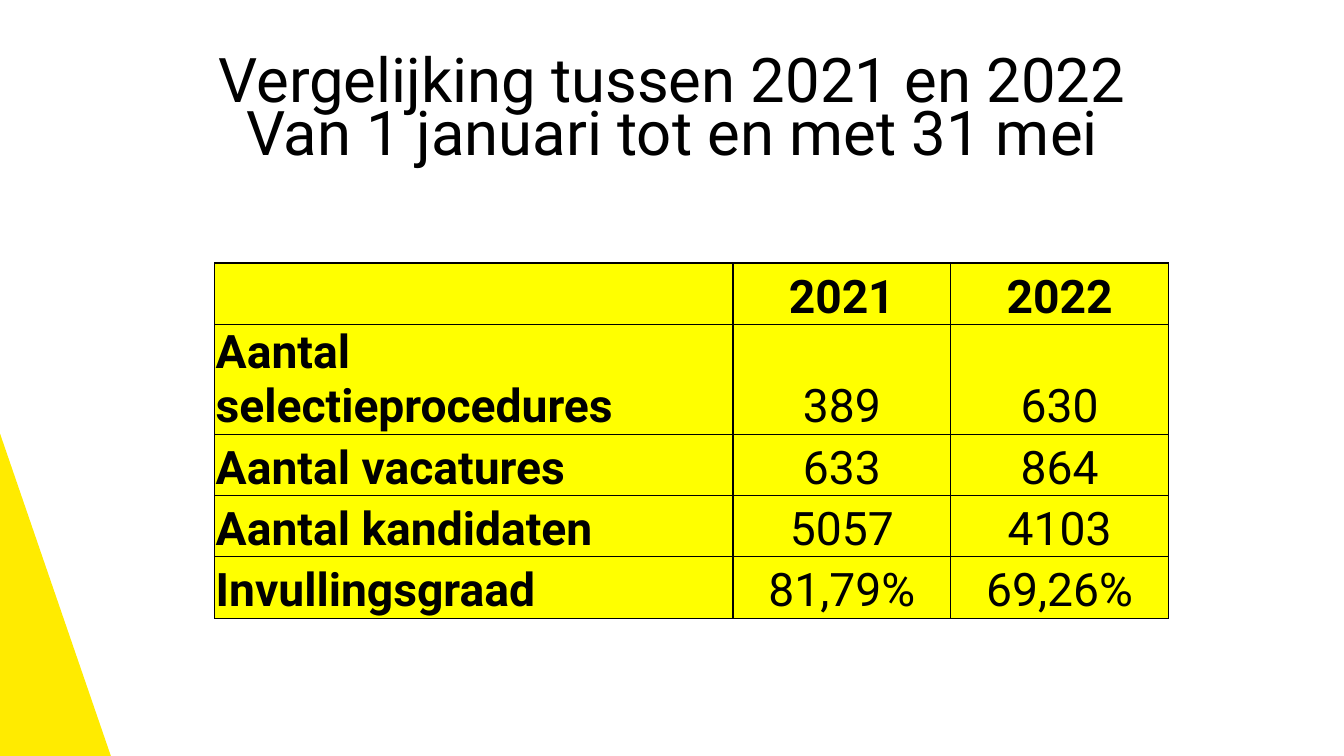
from pptx import Presentation
from pptx.dml.color import RGBColor
from pptx.enum.text import MSO_ANCHOR as Anchor, MSO_AUTO_SIZE as AutoSize, PP_ALIGN as Align
from pptx.oxml import parse_xml
from pptx.oxml.ns import nsdecls
from pptx.util import Inches, Pt

TITLE = "Vergelijking tussen 2021 en 2022\vVan 1 januari tot en met 31 mei"
ROWS = [
    ("", "2021", "2022"),
    ("Aantal selectieprocedures", "389", "630"),
    ("Aantal vacatures", "633", "864"),
    ("Aantal kandidaten", "5057", "4103"),
    ("Invullingsgraad", "81,79%", "69,26%"),
]
COLUMN_WIDTHS = (5.14, 2.16, 2.16)
ROW_HEIGHTS = (0.61, 1.08, 0.61, 0.61, 0.61)

FONT = "Roboto"
BLACK = RGBColor(0x00, 0x00, 0x00)
CELL_YELLOW = RGBColor(0xFF, 0xFF, 0x00)
WEDGE_YELLOW = RGBColor(0xFF, 0xEB, 0x00)


def write(text_frame, text, size, bold=False, align=Align.LEFT, line_spacing=None):
    paragraph = text_frame.paragraphs[0]
    paragraph.text = text
    paragraph.alignment = align
    paragraph.line_spacing = line_spacing
    for run in paragraph.runs:
        run.font.name = FONT
        run.font.size = Pt(size)
        run.font.bold = bold
        run.font.color.rgb = BLACK


def set_borders(cell, **widths):
    properties = cell._tc.get_or_add_tcPr()
    for position, (side, width) in enumerate(widths.items()):
        properties.insert(position, parse_xml(
            f'<a:ln{side} {nsdecls("a")} w="{Pt(width)}"><a:solidFill>'
            f'<a:srgbClr val="{BLACK}"/></a:solidFill></a:ln{side}>'))


def add_wedge(slide):
    builder = slide.shapes.build_freeform(0, Inches(7.5))
    builder.add_line_segments([(0, Inches(4.3)), (Inches(1.1), Inches(7.5))])
    wedge = builder.convert_to_shape()
    wedge.shadow.inherit = False
    wedge.fill.solid()
    wedge.fill.fore_color.rgb = WEDGE_YELLOW
    wedge.line.fill.background()


def add_title(slide):
    title = slide.shapes.title
    title.left, title.top = Inches(0.41), Inches(0.47)
    title.width, title.height = Inches(12.52), Inches(1.33)
    frame = title.text_frame
    frame.margin_left = frame.margin_right = frame.margin_top = frame.margin_bottom = 0
    frame.vertical_anchor = Anchor.MIDDLE
    frame.auto_size = AutoSize.NONE
    frame.word_wrap = True
    write(frame, TITLE, 44, align=Align.CENTER, line_spacing=Pt(38))


def add_comparison(slide):
    table = slide.shapes.add_table(
        len(ROWS), len(COLUMN_WIDTHS), Inches(2.13), Inches(2.61),
        Inches(sum(COLUMN_WIDTHS)), Inches(sum(ROW_HEIGHTS))).table
    table.first_row = table.horz_banding = False
    for column, width in zip(table.columns, COLUMN_WIDTHS):
        column.width = Inches(width)
    last = len(ROWS) - 1
    for i, values in enumerate(ROWS):
        table.rows[i].height = Inches(ROW_HEIGHTS[i])
        for j, value in enumerate(values):
            cell = table.cell(i, j)
            cell.margin_left = cell.margin_right = cell.margin_top = Inches(0.01)
            cell.margin_bottom = 0
            cell.vertical_anchor = Anchor.BOTTOM
            cell.fill.solid()
            cell.fill.fore_color.rgb = CELL_YELLOW
            set_borders(cell, L=1, R=1, T=1 if i == 0 else 0.5, B=1 if i == last else 0.5)
            write(cell.text_frame, value, 33, bold=i == 0 or j == 0,
                  align=Align.CENTER if j else Align.LEFT)


def main():
    presentation = Presentation()
    presentation.slide_width = Inches(13.33)
    presentation.slide_height = Inches(7.5)
    slide = presentation.slides.add_slide(presentation.slide_layouts[5])
    add_wedge(slide)
    add_title(slide)
    add_comparison(slide)
    presentation.save("out.pptx")


if __name__ == "__main__":
    main()
